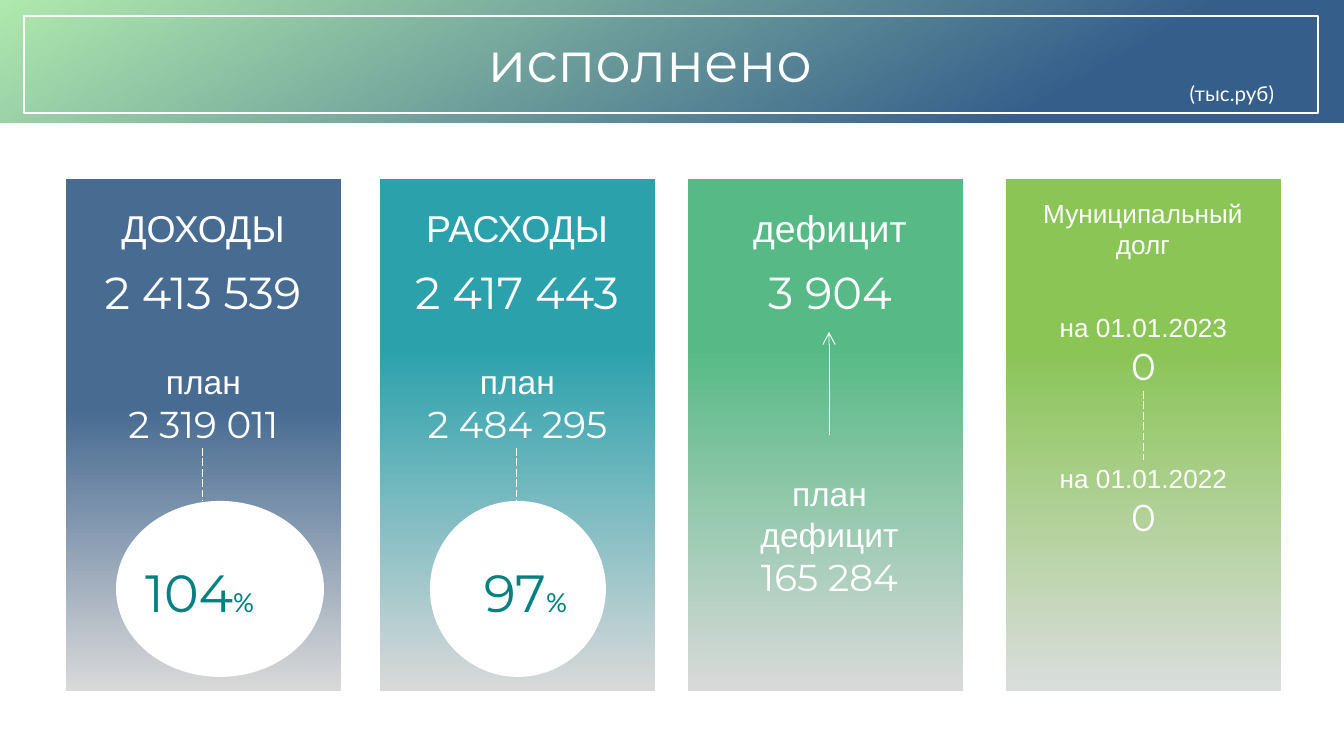
import lxml.etree
import pptx
import pptx.dml.color
import pptx.enum.dml
import pptx.enum.shapes
import pptx.enum.text
import pptx.oxml.ns
import pptx.util

PX = 914400 / 134.4
COLORS = {
    "white": "FFFFFF", "mint": "B0E9AD", "navy": "355E8B", "blue": "486B92",
    "teal": "2BA1AC", "green": "57BA86", "lime": "8AC556", "grey": "D9D9D9",
    "mist": "DADDDD", "percent": "008080",
}
ALIGN = pptx.enum.text.PP_ALIGN
ANCHOR = pptx.enum.text.MSO_ANCHOR
SHAPE = pptx.enum.shapes.MSO_SHAPE
LABEL_FRAME = {
    "margin_left": pptx.util.Inches(0.04), "margin_right": pptx.util.Inches(0.04),
    "margin_top": pptx.util.Inches(0.02), "margin_bottom": pptx.util.Inches(0.02),
    "vertical_anchor": ANCHOR.MIDDLE, "word_wrap": False,
    "auto_size": pptx.enum.text.MSO_AUTO_SIZE.SHAPE_TO_FIT_TEXT,
}
PERCENT_FRAME = {"word_wrap": True, "vertical_anchor": ANCHOR.TOP}


def emu(*lengths):
    return [round(length * PX) for length in lengths]


def rgb(color):
    return pptx.dml.color.RGBColor.from_string(COLORS[color])


def apply(target, values):
    for name, value in values.items():
        setattr(target, name, value)


def write(frame, lines, color="white", align=ALIGN.CENTER, **changes):
    apply(frame, {**LABEL_FRAME, **changes})
    for index, runs in enumerate(lines):
        paragraph = frame.paragraphs[0] if index == 0 else frame.add_paragraph()
        paragraph.alignment = align
        for words, size, typeface in runs:
            run = paragraph.add_run()
            run.text = words
            apply(run.font, {"size": pptx.util.Pt(size), "name": typeface, "bold": False})
            run.font.color.rgb = rgb(color)


def add_label(slide, box, lines, **changes):
    write(slide.shapes.add_textbox(*emu(*box)).text_frame, lines, **changes)


def add_panel(slide, kind, box):
    panel = slide.shapes.add_shape(kind, *emu(*box))
    panel.shadow.inherit = False
    panel.line.fill.background()
    return panel


def add_gradient(slide, box, stops, angle):
    fill = add_panel(slide, SHAPE.RECTANGLE, box).fill
    fill.gradient()
    fill.gradient_angle = 360 - angle
    for stop, (position, color) in zip(fill.gradient_stops, stops):
        stop.position = position
        stop.color.rgb = rgb(color)


def add_link(slide, x, start, end, arrow=False):
    link = slide.shapes.add_connector(
        pptx.enum.shapes.MSO_CONNECTOR.STRAIGHT, *emu(x, start, x, end))
    link.line.width = pptx.util.Pt(0.5)
    link.line.color.rgb = rgb("white")
    properties = link.element.spPr
    qn = pptx.oxml.ns.qn
    if arrow:
        lxml.etree.SubElement(properties.find(qn("a:ln")), qn("a:tailEnd"), type="arrow")
    else:
        link.line.dash_style = pptx.enum.dml.MSO_LINE.LONG_DASH
    lxml.etree.SubElement(properties, qn("a:effectLst"))


def build_header(slide, left, top, width, height):
    add_gradient(slide, (left, top, width, height), [(0, "mint"), (0.79, "navy")], 60)
    title = slide.shapes.title
    slide.shapes.element.append(title.element)
    places = emu(left + 470, top + 24, 360, 73)
    apply(title, dict(zip(("left", "top", "width", "height"), places)))
    write(title.text_frame, [[("исполнено", 30, "Montserrat")]])
    border = add_panel(slide, SHAPE.RECTANGLE, (left + 24, top + 16, width - 50, 97))
    border.fill.background()
    border.line.color.rgb = rgb("white")
    border.line.width = pptx.util.Pt(1)
    add_label(slide, (left + 1152, top + 78, 160, 30), [[("(тыс.руб)", 11, "Lato")]],
              word_wrap=True, vertical_anchor=ANCHOR.TOP)


def build_amount(slide, axis, top, heading, heading_width, amount, amount_width):
    add_label(slide, (axis - heading_width / 2, top + 24, heading_width, 50),
              [[(heading, 20, "Arial")]])
    add_label(slide, (axis - amount_width / 2, top + 83, amount_width, 59),
              [[(amount, 24, "Montserrat")]])


def build_execution(slide, box, color, solid, heading, heading_width, amount, plan,
                    percent, circle_width, percent_left, align):
    left, top, width, height = box
    axis = left + width // 2
    add_gradient(slide, box, [(solid, color), (1, "grey")], 90)
    build_amount(slide, axis, top, heading, heading_width, amount, 251)
    add_label(slide, (axis - 105, top + 179, 211, 91),
              [[("план", 18, "Arial")], [(plan, 20, "Montserrat")]])
    circle = add_panel(slide, SHAPE.OVAL, (left + 50, top + 322, circle_width, 176))
    circle.fill.solid()
    circle.fill.fore_color.rgb = rgb("white")
    margins = {"margin_left": pptx.util.Inches(0.1), "margin_right": pptx.util.Inches(0.1),
               "margin_top": pptx.util.Inches(0.05), "margin_bottom": pptx.util.Inches(0.05),
               "auto_size": pptx.enum.text.MSO_AUTO_SIZE.NONE}
    add_label(slide, (left + percent_left, top + 375, 169, 50),
              [[(percent, 28, "Montserrat"), ("%", 14, "Lato")]],
              color="percent", align=align, **PERCENT_FRAME, **margins)
    add_link(slide, axis, top + 269, top + 322)


def build_deficit(slide, box):
    left, top, width, height = box
    axis = left + 142
    add_gradient(slide, box, [(0.33, "green"), (1, "grey")], 90)
    build_amount(slide, axis, top, "дефицит", 165, "3 904", 147)
    add_label(slide, (axis - 87, top + 291, 173, 132),
              [[("план", 18, "Arial")], [("дефицит", 18, "Arial")],
               [("165 284", 20, "Montserrat")]])
    add_link(slide, axis - 1, top + 256, top + 153, arrow=True)


def build_debt(slide, box):
    left, top, width, height = box
    axis = left + width // 2
    add_gradient(slide, box, [(0.33, "lime"), (1, "mist")], 90)
    add_label(slide, (left + 6, top + 15, width - 13, 69),
              [[("Муниципальный долг", 14, "Arial")]], word_wrap=True)
    for date, offset in (("на 01.01.2023", 130), ("на 01.01.2022", 281)):
        add_label(slide, (axis - 89, top + offset, 179, 82),
                  [[(date, 14, "Arial")], [("0", 20, "Montserrat")]])
    add_link(slide, axis, top + 212, top + 281)


def main():
    deck = pptx.Presentation()
    deck.slide_width, deck.slide_height = emu(1344, 756)
    slide = deck.slides.add_slide(deck.slide_layouts[5])
    build_header(slide, 0, 0, 1344, 123)
    income, spending, deficit, debt = [
        (left, 179, 275, 512) for left in (66, 380, 688, 1006)]
    build_execution(slide, income, "blue", 0.45, "ДОХОДЫ", 175, "2 413 539",
                    "2 319 011", "104", 208, 66, ALIGN.LEFT)
    build_execution(slide, spending, "teal", 0.33, "РАСХОДЫ", 194, "2 417 443",
                    "2 484 295", "97", 176, 61, ALIGN.CENTER)
    build_deficit(slide, deficit)
    build_debt(slide, debt)
    deck.save("out.pptx")


if __name__ == "__main__":
    main()
